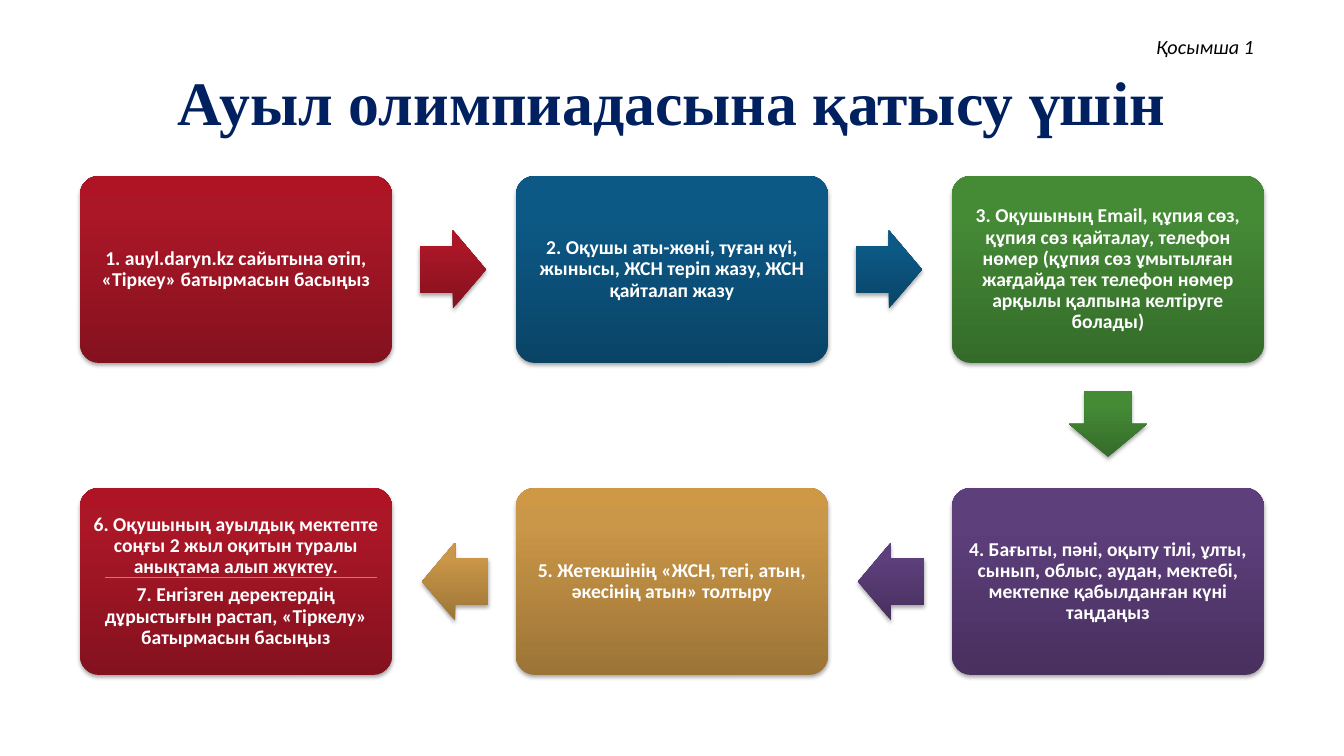
"""Build a slide with the six-card path for joining the village olympiad."""
from copy import deepcopy
from math import cos, radians, sin

from pptx import Presentation
from pptx.dml.color import RGBColor
from pptx.enum.shapes import MSO_CONNECTOR, MSO_SHAPE
from pptx.enum.text import MSO_ANCHOR, PP_ALIGN
from pptx.oxml import parse_xml
from pptx.oxml.ns import nsdecls, qn
from pptx.util import Emu, Pt

WHITE = RGBColor(0xFF, 0xFF, 0xFF)
BLACK = RGBColor(0x00, 0x00, 0x00)
NAVY = RGBColor(0x00, 0x20, 0x60)
ORANGE = RGBColor(0xF0, 0x7C, 0x03)
RED = [RGBColor(0x84, 0x11, 0x1E), RGBColor(0xAB, 0x17, 0x27), RGBColor(0xAF, 0x14, 0x25)]
BLUE = [RGBColor(0x09, 0x44, 0x67), RGBColor(0x0C, 0x59, 0x86), RGBColor(0x0A, 0x5A, 0x89)]
GREEN = [RGBColor(0x35, 0x6B, 0x2A), RGBColor(0x45, 0x8B, 0x36), RGBColor(0x45, 0x8D, 0x35)]
PURPLE = [RGBColor(0x48, 0x30, 0x5F), RGBColor(0x5D, 0x3F, 0x7B), RGBColor(0x5D, 0x3E, 0x7D)]
GOLD = [RGBColor(0x9C, 0x74, 0x37), RGBColor(0xCA, 0x96, 0x47), RGBColor(0xCE, 0x98, 0x45)]

LABEL = "Қосымша 1"
TITLE = "Ауыл олимпиадасына қатысу үшін"
# (column, row, colours, arrow angle, paragraphs)
STEPS = [
    (0, 0, RED, 0, ["1. auyl.daryn.kz сайытына өтіп, «Тіркеу» батырмасын басыңыз"]),
    (1, 0, BLUE, 0, ["2. Оқушы аты-жөні, туған күі, жынысы, ЖСН теріп жазу, ЖСН қайталап жазу"]),
    (2, 0, GREEN, 90, ["3. Оқушының Email, құпия сөз, құпия сөз қайталау, телефон нөмер "
                       "(құпия сөз ұмытылған жағдайда тек телефон нөмер арқылы қалпына "
                       "келтіруге болады)"]),
    (2, 1, PURPLE, 180, ["4. Бағыты, пәні, оқыту тілі, ұлты, сынып, облыс, аудан, мектебі, "
                         "мектепке қабылданған күні таңдаңыз"]),
    (1, 1, GOLD, 180, ["5. Жетекшінің «ЖСН, тегі, атын, әкесінің атын» толтыру"]),
    (0, 1, RED, None, ["6. Оқушының ауылдық мектепте соңғы 2 жыл оқитын туралы анықтама алып жүктеу.",
                       "7. Енгізген деректердің дұрыстығын растап, «Тіркелу» батырмасын басыңыз"]),
]
LEFT, TOP, STEP_X, STEP_Y = 80, 176, 436, 312
CARD_W, CARD_H = 312, 187
ARROW_W, ARROW_H, GAP = 66, 78, 28


def px(n):
    return Emu(round(n * 914400 / 100.8))


def write(frame, texts, font, size, color, align, pad=0, **style):
    frame.word_wrap = True
    frame.vertical_anchor = MSO_ANCHOR.MIDDLE
    frame.margin_left = frame.margin_right = px(pad)
    frame.margin_top = frame.margin_bottom = px(pad)
    for i, text in enumerate(texts):
        para = frame.add_paragraph() if i else frame.paragraphs[0]
        para.alignment = align
        para.line_spacing = 0.9
        if i:
            para.space_before = Pt(5)
        run = para.add_run()
        run.text = text
        run.font.name, run.font.size = font, Pt(size)
        run.font.color.rgb = color
        for key, value in style.items():
            setattr(run.font, key, value)
    return run


def add_part(slide, kind, box, colors, adjust):
    part = slide.shapes.add_shape(kind, *map(px, box))
    for i, value in enumerate(adjust):
        part.adjustments[i] = value
    part.line.fill.background()
    part.fill.gradient()
    props = part._element.spPr
    grad = props.find(qn("a:gradFill"))
    grad.set("rotWithShape", "0")
    stops = grad.find(qn("a:gsLst"))
    stops.append(deepcopy(stops[1]))
    for stop, spot, color in zip(part.fill.gradient_stops, (0, 0.8, 1), colors):
        stop.position = spot
        stop.color.rgb = color
    part.fill.gradient_angle = 90
    part.shadow.inherit = False
    props.find(qn("a:effectLst")).append(parse_xml(
        f'<a:outerShdw {nsdecls("a")} blurRad="{Pt(3.1)}" dist="{Pt(1.8)}" dir="5400000" '
        f'rotWithShape="0"><a:srgbClr val="{BLACK}"><a:alpha val="35000"/></a:srgbClr>'
        '</a:outerShdw>'))
    return part


def add_step(slide, col, row, colors, angle, texts):
    x, y = LEFT + col * STEP_X, TOP + row * STEP_Y
    card = add_part(slide, MSO_SHAPE.ROUNDED_RECTANGLE, (x, y, CARD_W, CARD_H), colors, [0.1])
    write(card.text_frame, texts, "Calibri", 14, WHITE, PP_ALIGN.CENTER, 6, bold=True)
    if angle is None:
        return
    turn = radians(angle)
    reach = GAP + ARROW_W / 2
    mid_x = x + CARD_W / 2 + cos(turn) * (CARD_W / 2 + reach)
    mid_y = y + CARD_H / 2 + sin(turn) * (CARD_H / 2 + reach)
    box = (mid_x - ARROW_W / 2, mid_y - ARROW_H / 2, ARROW_W, ARROW_H)
    arrow = add_part(slide, MSO_SHAPE.RIGHT_ARROW, box, colors, [0.6, 0.5])
    arrow.rotation = angle


def main():
    deck = Presentation()
    deck.slide_width, deck.slide_height = px(1344), px(756)
    slide = deck.slides.add_slide(deck.slide_layouts[6])

    label = slide.shapes.add_textbox(*map(px, (1053, 35, 201, 25)))
    write(label.text_frame, [LABEL], "Calibri", 14.4, BLACK, PP_ALIGN.RIGHT, italic=True)
    title = slide.shapes.add_textbox(*map(px, (67, 70, 1210, 71)))
    run = write(title.text_frame, [TITLE], "Times New Roman", 44.1, NAVY,
                PP_ALIGN.CENTER, bold=True)
    run.font._element.insert(0, parse_xml(
        f'<a:ln {nsdecls("a")} w="{Pt(0.75)}"><a:solidFill><a:srgbClr val="{WHITE}"/>'
        '</a:solidFill></a:ln>'))

    for step in STEPS:
        add_step(slide, *step)

    rule = slide.shapes.add_connector(MSO_CONNECTOR.STRAIGHT, *map(px, (105, 578, 377, 578)))
    rule.line.color.rgb = ORANGE
    rule.line.width = Pt(0.75)
    rule._element.spPr.append(parse_xml(f'<a:effectLst {nsdecls("a")}/>'))
    deck.save("out.pptx")


if __name__ == "__main__":
    main()
